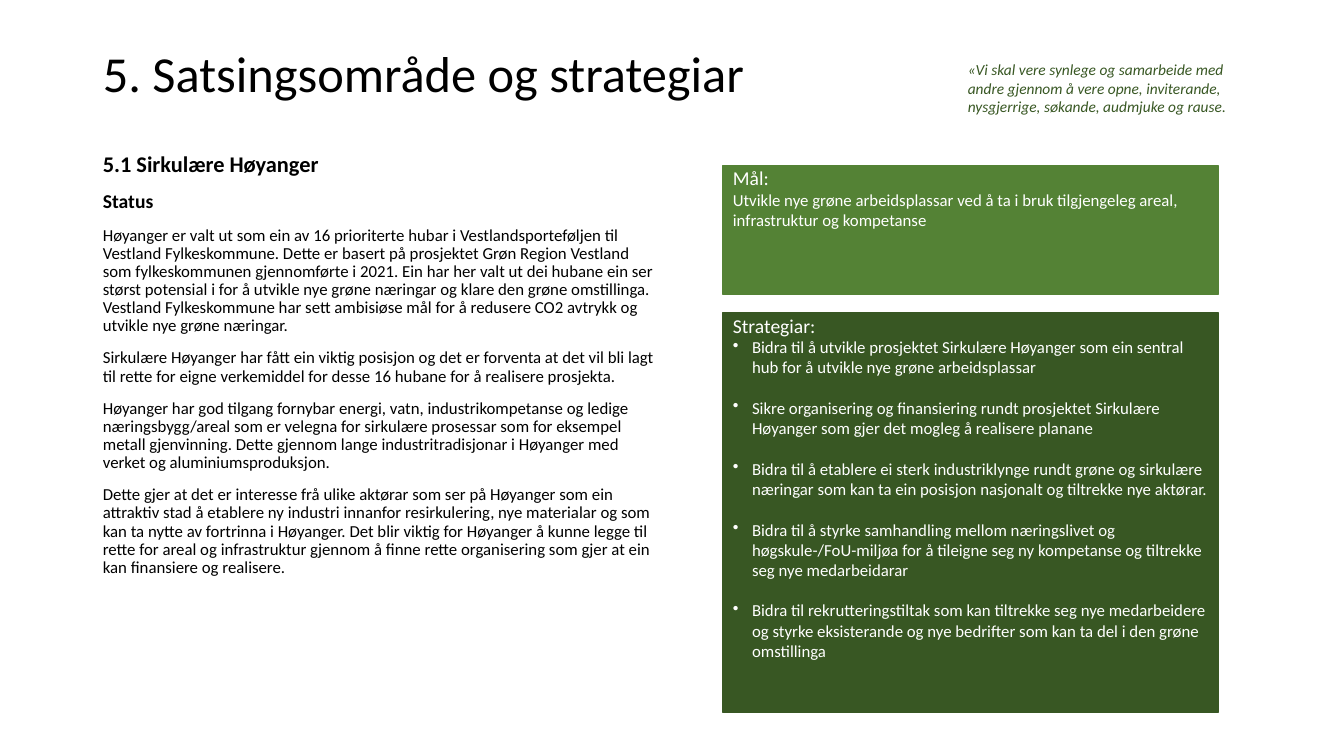
import pptx
import pptx.dml.color
import pptx.enum.shapes
import pptx.enum.text
import pptx.oxml.ns
import pptx.util
import lxml.etree

Inches, Pt = pptx.util.Inches, pptx.util.Pt
ANCHOR = pptx.enum.text.MSO_ANCHOR

THEME = {
    "font": "Calibri",
    "black": "000000", "white": "FFFFFF",
    "light_green": "548235", "dark_green": "385723",
    "title": 36, "section": 16, "heading": 14, "text": 12, "quote": 11,
}

# Grid: shared margins and column edges, in inches
LEFT, RIGHT = 0.92, 12.42
PANEL_LEFT, PANEL_WIDTH = 7.17, 4.91
BULLET_INDENT = 0.19

BODY = [
    ("5.1 Sirkulære Høyanger", "section", True),
    ("Status", "heading", True),
    ("Høyanger er valt ut som ein av 16 prioriterte hubar i Vestlandsporteføljen til "
     "Vestland Fylkeskommune. Dette er basert på prosjektet Grøn Region Vestland som "
     "fylkeskommunen gjennomførte i 2021. Ein har her valt ut dei hubane ein ser størst "
     "potensial i for å utvikle nye grøne næringar og klare den grøne omstillinga. "
     "Vestland Fylkeskommune har sett ambisiøse mål for å redusere CO2 avtrykk og "
     "utvikle nye grøne næringar.", "text", False),
    ("Sirkulære Høyanger har fått ein viktig posisjon og det er forventa at det vil bli "
     "lagt til rette for eigne verkemiddel for desse 16 hubane for å realisere "
     "prosjekta.", "text", False),
    ("Høyanger har god tilgang fornybar energi, vatn, industrikompetanse og ledige "
     "næringsbygg/areal som er velegna for sirkulære prosessar som for eksempel metall "
     "gjenvinning. Dette gjennom lange industritradisjonar i Høyanger med verket og "
     "aluminiumsproduksjon.", "text", False),
    ("Dette gjer at det er interesse frå ulike aktørar som ser på Høyanger som ein "
     "attraktiv stad å etablere ny industri innanfor resirkulering, nye materialar og "
     "som kan ta nytte av fortrinna i Høyanger. Det blir viktig for Høyanger å kunne "
     "legge til rette for areal og infrastruktur gjennom å finne rette organisering som "
     "gjer at ein kan finansiere og realisere.", "text", False),
]

# Each panel: top, height, colour, heading, texts, bulleted
PANELS = [
    (1.64, 1.28, "light_green", "Mål:", [
        "Utvikle nye grøne arbeidsplassar ved å ta i bruk tilgjengeleg areal, "
        "infrastruktur og kompetanse",
    ], False),
    (3.1, 3.97, "dark_green", "Strategiar:", [
        "Bidra til å utvikle prosjektet Sirkulære Høyanger som ein sentral hub for å "
        "utvikle nye grøne arbeidsplassar",
        "Sikre organisering og finansiering rundt prosjektet Sirkulære Høyanger som gjer "
        "det mogleg å realisere planane",
        "Bidra til å etablere ei sterk industriklynge rundt grøne og sirkulære næringar "
        "som kan ta ein posisjon nasjonalt og tiltrekke nye aktørar.",
        "Bidra til å styrke samhandling mellom næringslivet og høgskule-/FoU-miljøa for "
        "å tileigne seg ny kompetanse og tiltrekke seg nye medarbeidarar",
        "Bidra til rekrutteringstiltak som kan tiltrekke seg nye medarbeidere og styrke "
        "eksisterande og nye bedrifter som kan ta del i den grøne omstillinga",
    ], True),
]


def write_paragraph(frame, text, size, color, bold=False, italic=False):
    """Fill the empty first paragraph, or add one after the others."""
    paragraph = frame.paragraphs[-1] if not frame.text else frame.add_paragraph()
    paragraph.text = text
    paragraph.alignment = pptx.enum.text.PP_ALIGN.LEFT
    paragraph.font.name = THEME["font"]
    paragraph.font.size = Pt(THEME[size])
    paragraph.font.color.rgb = pptx.dml.color.RGBColor.from_string(THEME[color])
    paragraph.font.bold, paragraph.font.italic = bold, italic
    return paragraph


def set_bullet(paragraph, character=None):
    """Give a hanging bullet, or remove the bullet and indent."""
    properties = paragraph._p.get_or_add_pPr()
    indent = Inches(BULLET_INDENT) if character else 0
    properties.set("marL", str(indent))
    properties.set("indent", str(-indent))
    tag = "a:buChar" if character else "a:buNone"
    bullet = lxml.etree.Element(pptx.oxml.ns.qn(tag))
    if character:
        bullet.set("char", character)
    properties.insert_element_before(bullet, "a:tabLst", "a:defRPr", "a:extLst")


presentation = pptx.Presentation()
presentation.slide_width, presentation.slide_height = Inches(13.33), Inches(7.5)
slide = presentation.slides.add_slide(presentation.slide_layouts[1])

# Title
title = slide.shapes.title
title.left, title.top = Inches(LEFT), Inches(0.37)
title.width, title.height = Inches(RIGHT - LEFT), Inches(0.78)
title.text_frame.auto_size = pptx.enum.text.MSO_AUTO_SIZE.NONE
title.text_frame.vertical_anchor = ANCHOR.MIDDLE
write_paragraph(title.text_frame, "5. Satsingsområde og strategiar",
                "title", "black").line_spacing = 0.9

# Status text
body = slide.placeholders[1]
body.left, body.top = Inches(LEFT), Inches(1.47)
body.width, body.height = Inches(5.68), Inches(5.25)
body.text_frame.auto_size = pptx.enum.text.MSO_AUTO_SIZE.NONE
for text, size, bold in BODY:
    paragraph = write_paragraph(body.text_frame, text, size, "black", bold=bold)
    paragraph.line_spacing, paragraph.space_before = 0.9, Pt(10)
    set_bullet(paragraph)

# Goal and strategy panels
for top, height, color, heading, texts, bulleted in PANELS:
    panel = slide.shapes.add_shape(
        pptx.enum.shapes.MSO_SHAPE.RECTANGLE,
        Inches(PANEL_LEFT), Inches(top), Inches(PANEL_WIDTH), Inches(height))
    panel.shadow.inherit = False
    panel.fill.solid()
    panel.fill.fore_color.rgb = pptx.dml.color.RGBColor.from_string(THEME[color])
    panel.line.color.rgb = pptx.dml.color.RGBColor.from_string(THEME[color])
    panel.line.width = Pt(1)
    frame = panel.text_frame
    frame.word_wrap = True
    frame.vertical_anchor = ANCHOR.TOP
    frame.margin_top = Inches(0.01)
    write_paragraph(frame, heading, "heading", "white")
    for text in texts:
        paragraph = write_paragraph(frame, text, "text", "white")
        if bulleted:
            paragraph.space_after = Pt(14.6)
            set_bullet(paragraph, "•")

# Quote
quote = slide.shapes.add_textbox(Inches(9.5), Inches(0.55), Inches(RIGHT - 9.5), Inches(0.66))
quote.text_frame.word_wrap = True
quote.text_frame.auto_size = pptx.enum.text.MSO_AUTO_SIZE.SHAPE_TO_FIT_TEXT
write_paragraph(quote.text_frame,
                "«Vi skal vere synlege og samarbeide med andre gjennom å vere opne, "
                "inviterande, nysgjerrige, søkande, audmjuke og rause.",
                "quote", "dark_green", italic=True)

presentation.save("out.pptx")
